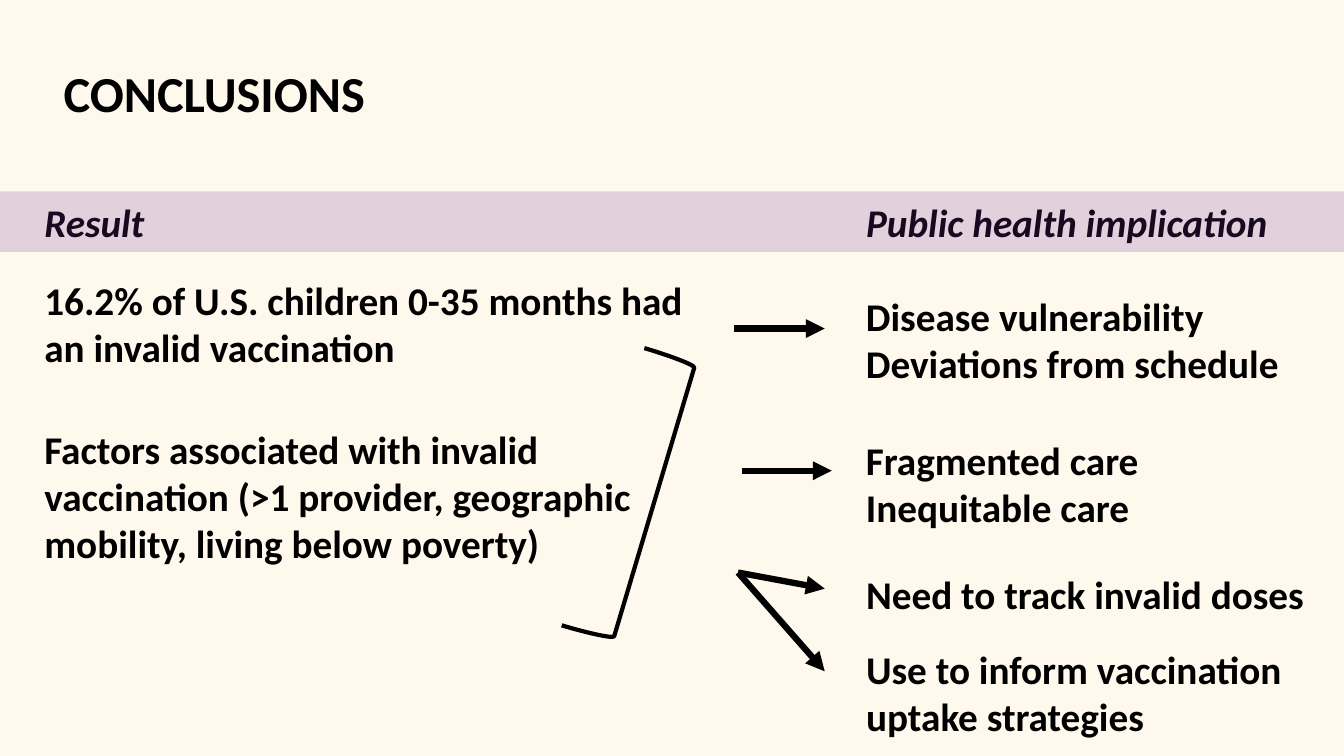
from lxml.etree import SubElement
from pptx import Presentation
from pptx.dml.color import RGBColor
from pptx.enum.shapes import MSO_CONNECTOR as Conn, MSO_SHAPE as Shape
from pptx.enum.text import MSO_ANCHOR as Anchor, MSO_AUTO_SIZE as AutoSize, PP_ALIGN as Align
from pptx.oxml.ns import qn
from pptx.util import Inches, Pt

COLORS = {"background": "FFF8EC", "ink": "000000", "band": "7030A0"}
FONT = "Calibri"


def rgb(name):
    return RGBColor.from_string(COLORS[name])


def write(sp, lines, size=28, italic=False, gap=0):
    """Fill a shape with one paragraph per line, gap points apart."""
    tf = sp.text_frame
    tf.word_wrap = True
    tf.auto_size = AutoSize.NONE
    tf.vertical_anchor = Anchor.TOP
    for i, line in enumerate(lines):
        p = tf.paragraphs[0] if i == 0 else tf.add_paragraph()
        p.alignment = Align.LEFT
        p.line_spacing = 1.0
        p.space_before = Pt(gap if i else 0)
        p.space_after = Pt(0)
        pPr = p._p.get_or_add_pPr()
        pPr.set("marL", "0")
        pPr.set("indent", "0")
        SubElement(pPr, qn("a:buNone"))
        r = p.add_run()
        r.text = line
        r.font.name = FONT
        r.font.size = Pt(size)
        r.font.bold = True
        r.font.italic = italic
        r.font.color.rgb = rgb("ink")


class SlideBuilder:
    def __init__(self, prs, layout):
        self.slide = prs.slides.add_slide(prs.slide_layouts[layout])
        self.shapes = self.slide.shapes
        fill = self.slide.background.fill
        fill.solid()
        fill.fore_color.rgb = rgb("background")

    def placeholder(self, idx, box, lines, **fmt):
        sp = self.slide.placeholders[idx]
        sp.left, sp.top, sp.width, sp.height = map(Inches, box)
        write(sp, lines, **fmt)

    def text(self, box, lines, **fmt):
        write(self.shapes.add_textbox(*map(Inches, box)), lines, **fmt)

    def band(self, box, opacity):
        sp = self.shapes.add_shape(Shape.RECTANGLE, *map(Inches, box))
        sp.shadow.inherit = False
        sp.line.fill.background()
        sp.fill.solid()
        sp.fill.fore_color.rgb = rgb("band")
        color = sp._element.spPr.find(".//" + qn("a:srgbClr"))
        SubElement(color, qn("a:alpha")).set("val", str(opacity * 1000))

    def bracket(self, box, rotation):
        sp = self.shapes.add_shape(Shape.RIGHT_BRACKET, *map(Inches, box))
        sp.shadow.inherit = False
        sp.rotation = rotation
        sp.fill.background()
        sp.line.color.rgb = rgb("ink")
        sp.line.width = Pt(3)

    def arrow(self, start, end):
        line = self.shapes.add_connector(Conn.STRAIGHT, *map(Inches, start + end))
        line.line.color.rgb = rgb("ink")
        line.line.width = Pt(4.5)
        SubElement(line.line._get_or_add_ln(), qn("a:tailEnd")).set("type", "triangle")
        SubElement(line._element.spPr, qn("a:effectLst"))


def main():
    prs = Presentation()
    prs.slide_width, prs.slide_height = Inches(13.33), Inches(7.5)
    s = SlideBuilder(prs, layout=4)
    left, right = 0.34, 8.49

    # Title and column headings
    s.placeholder(0, (0.53, 0.57, 7.96, 0.71), ["CONCLUSIONS"], size=36)
    s.placeholder(1, (left, 1.92, 4.24, 0.57), ["Result"], italic=True)
    s.placeholder(3, (right, 1.92, 4.24, 0.57), ["Public health implication"], italic=True)

    # Results
    s.placeholder(2, (left, 2.69, 6.94, 3), [
        "16.2% of U.S. children 0-35 months had an invalid vaccination",
        "Factors associated with invalid vaccination "
        "(>1 provider, geographic mobility, living below poverty)",
    ], gap=39)

    # Implications
    s.text((right, 2.85, 4.35, 1.04), ["Disease vulnerability", "Deviations from schedule"])
    s.text((right, 4.28, 3.55, 1.04), ["Fragmented care", "Inequitable care"])
    s.placeholder(4, (right, 5.61, 5.02, 1.78), [
        "Need to track invalid doses",
        "Use to inform vaccination uptake strategies",
    ], gap=19.5)

    # Translucent heading band, bracket and arrows
    s.band((-0.09, 1.9, 13.5, 0.6), opacity=20)
    s.bracket((5.97, 3.47, 0.53, 2.87), rotation=16.6)
    fork = (7.32, 5.68)
    for start, end in [
        ((7.28, 3.26), (8.18, 3.26)),
        ((7.36, 4.67), (8.25, 4.67)),
        (fork, (8.18, 5.84)),
        (fork, (8.18, 6.66)),
    ]:
        s.arrow(start, end)

    prs.save("out.pptx")


if __name__ == "__main__":
    main()
